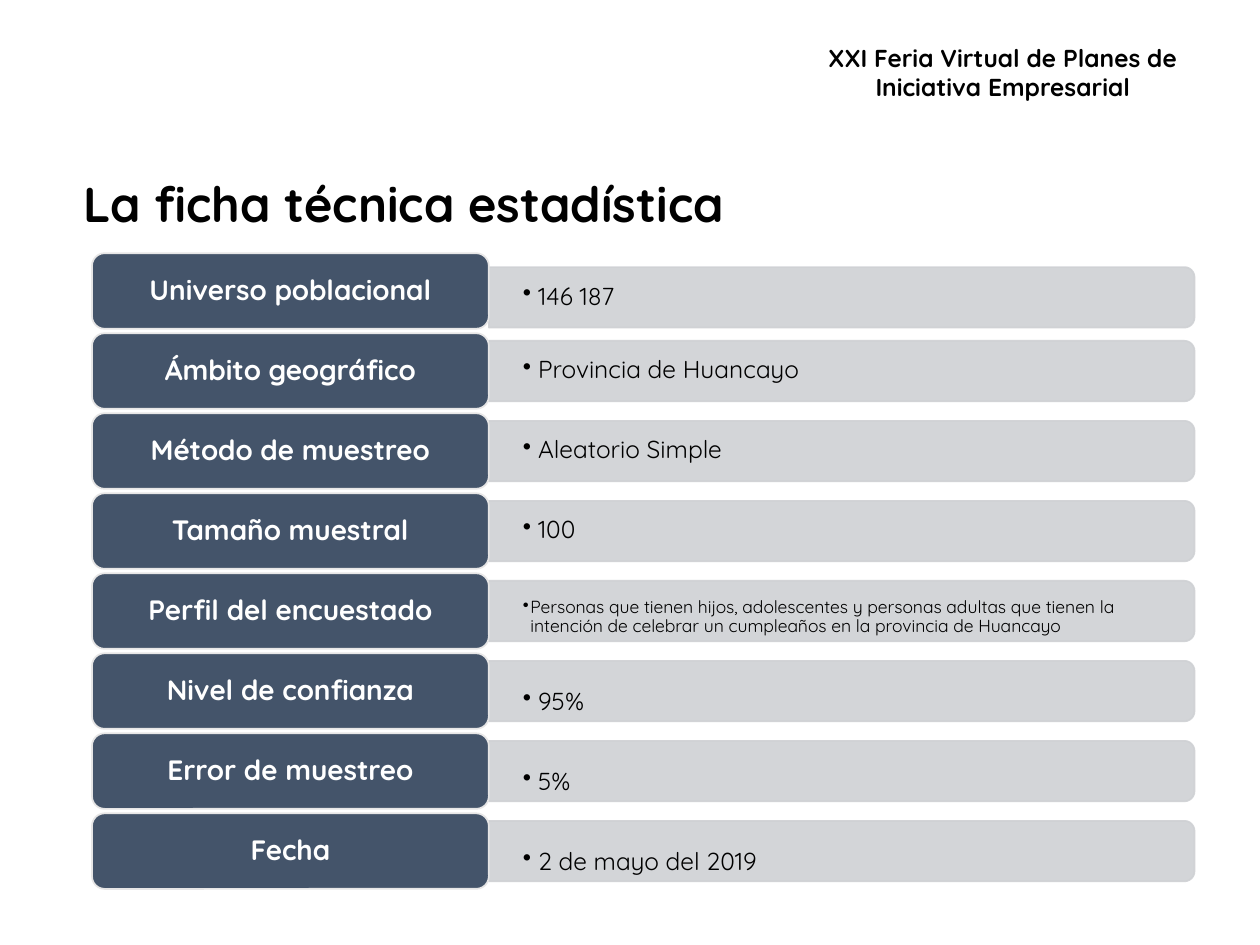
"""Build the statistical data sheet slide."""
from dataclasses import dataclass

import pptx
import pptx.dml.color
import pptx.enum.shapes
import pptx.enum.text
import pptx.oxml.ns
import pptx.util
from lxml import etree
from pptx.util import Inches

RGBColor = pptx.dml.color.RGBColor
ALIGN = pptx.enum.text.PP_ALIGN
MIDDLE = pptx.enum.text.MSO_ANCHOR.MIDDLE
SHAPE = pptx.enum.shapes.MSO_SHAPE
qn = pptx.oxml.ns.qn

BLACK = RGBColor(0x00, 0x00, 0x00)
WHITE = RGBColor(0xFF, 0xFF, 0xFF)
NAVY = RGBColor(0x44, 0x54, 0x6A)
PALE = RGBColor(0xE7, 0xE6, 0xE6)
GREY = RGBColor(0xCF, 0xD1, 0xD4)
FONT = "Quicksand"

FIRST_CENTER = 2.31
ROW_PITCH = 0.635
LABEL_LEFT, LABEL_WIDTH, LABEL_HEIGHT = 0.73, 3.15, 0.6
BAR_LEFT, BAR_LENGTH, BAR_HEIGHT = 3.88, 5.6, 0.48
VALUE_WIDTH, VALUE_HEIGHT = 5.58, 0.44


@dataclass(frozen=True)
class Fact:
    label: str
    value: str
    size: int = 14
    indent: float = 0.12
    text_drop: float = 0
    bar_drop: float = 0


FACTS = [
    Fact("Universo poblacional", "146 187", bar_drop=0.05),
    Fact("Ámbito geográfico", "Provincia de Huancayo"),
    Fact("Método de muestreo", "Aleatorio Simple"),
    Fact("Tamaño muestral", "100"),
    Fact("Perfil del encuestado",
         "Personas que tienen hijos, adolescentes y personas adultas que tienen la "
         "intención de celebrar un cumpleaños en la provincia de Huancayo",
         size=10, indent=0.06, text_drop=0.05),
    Fact("Nivel de confianza", "95%", text_drop=0.09),
    Fact("Error de muestreo", "5%", text_drop=0.09),
    Fact("Fecha", "2 de mayo del 2019", text_drop=0.09),
]


def add_run(paragraph, text: str, size: int, color: RGBColor, bold: bool = False) -> None:
    run = paragraph.add_run()
    run.text = text
    run.font.name = FONT
    run.font.size = pptx.util.Pt(size)
    run.font.bold = bold
    run.font.color.rgb = color


def paint(shape, fill: RGBColor, line: RGBColor) -> None:
    shape.shadow.inherit = False
    shape.fill.solid()
    shape.fill.fore_color.rgb = fill
    shape.line.color.rgb = line
    shape.line.width = pptx.util.Pt(1)


def add_bar(slide, center: float) -> None:
    bar = slide.shapes.add_shape(
        SHAPE.ROUND_2_SAME_RECTANGLE,
        Inches(BAR_LEFT + (BAR_LENGTH - BAR_HEIGHT) / 2), Inches(center - BAR_LENGTH / 2),
        Inches(BAR_HEIGHT), Inches(BAR_LENGTH))
    bar.rotation = 90
    paint(bar, GREY, GREY)
    for color in bar.element.spPr.iter(qn("a:srgbClr")):
        etree.SubElement(color, qn("a:alpha"), val="90000")


def add_value(slide, fact: Fact, center: float) -> None:
    box = slide.shapes.add_textbox(
        Inches(BAR_LEFT), Inches(center - VALUE_HEIGHT / 2),
        Inches(VALUE_WIDTH), Inches(VALUE_HEIGHT))
    frame = box.text_frame
    frame.word_wrap = True
    frame.vertical_anchor = MIDDLE
    frame.margin_left = frame.margin_right = Inches(0.27)
    frame.margin_top = Inches(2 * fact.text_drop)
    frame.margin_bottom = 0
    paragraph = frame.paragraphs[0]
    paragraph.level = 1
    paragraph.line_spacing = 0.9
    properties = paragraph._p.get_or_add_pPr()
    properties.set("marL", str(Inches(fact.indent)))
    properties.set("indent", str(-Inches(fact.indent)))
    etree.SubElement(properties, qn("a:buChar"), char="•")
    add_run(paragraph, fact.value, fact.size, BLACK)


def add_label(slide, fact: Fact, center: float) -> None:
    label = slide.shapes.add_shape(
        SHAPE.ROUNDED_RECTANGLE, Inches(LABEL_LEFT), Inches(center - LABEL_HEIGHT / 2),
        Inches(LABEL_WIDTH), Inches(LABEL_HEIGHT))
    paint(label, NAVY, PALE)
    frame = label.text_frame
    frame.word_wrap = True
    frame.vertical_anchor = MIDDLE
    frame.margin_top = frame.margin_bottom = Inches(0.03)
    paragraph = frame.paragraphs[0]
    paragraph.alignment = ALIGN.CENTER
    paragraph.line_spacing = 0.9
    add_run(paragraph, fact.label, 16, WHITE, bold=True)


def add_heading(slide) -> None:
    fair = slide.shapes.add_textbox(Inches(6.29), Inches(0.29), Inches(3.34), Inches(0.57))
    fair.text_frame.word_wrap = True
    paragraph = fair.text_frame.paragraphs[0]
    paragraph.alignment = ALIGN.CENTER
    add_run(paragraph, "XXI Feria Virtual de Planes de Iniciativa Empresarial", 14, BLACK, bold=True)

    title = slide.shapes.title
    title.left, title.top = Inches(0.56), Inches(1.28)
    title.width, title.height = Inches(8.62), Inches(0.72)
    title.text_frame.auto_size = pptx.enum.text.MSO_AUTO_SIZE.NONE
    title.text_frame.vertical_anchor = MIDDLE
    paragraph = title.text_frame.paragraphs[0]
    paragraph.alignment = ALIGN.LEFT
    paragraph.line_spacing = 0.9
    add_run(paragraph, "La ficha técnica estadística", 28, BLACK, bold=True)


def main() -> None:
    deck = pptx.Presentation()
    deck.slide_width, deck.slide_height = Inches(10), Inches(7.5)
    slide = deck.slides.add_slide(deck.slide_layouts[5])
    add_heading(slide)
    for row, fact in enumerate(FACTS):
        center = FIRST_CENTER + row * ROW_PITCH
        add_bar(slide, center + fact.bar_drop)
        add_value(slide, fact, center + fact.bar_drop)
        add_label(slide, fact, center)
    deck.save("out.pptx")


if __name__ == "__main__":
    main()
